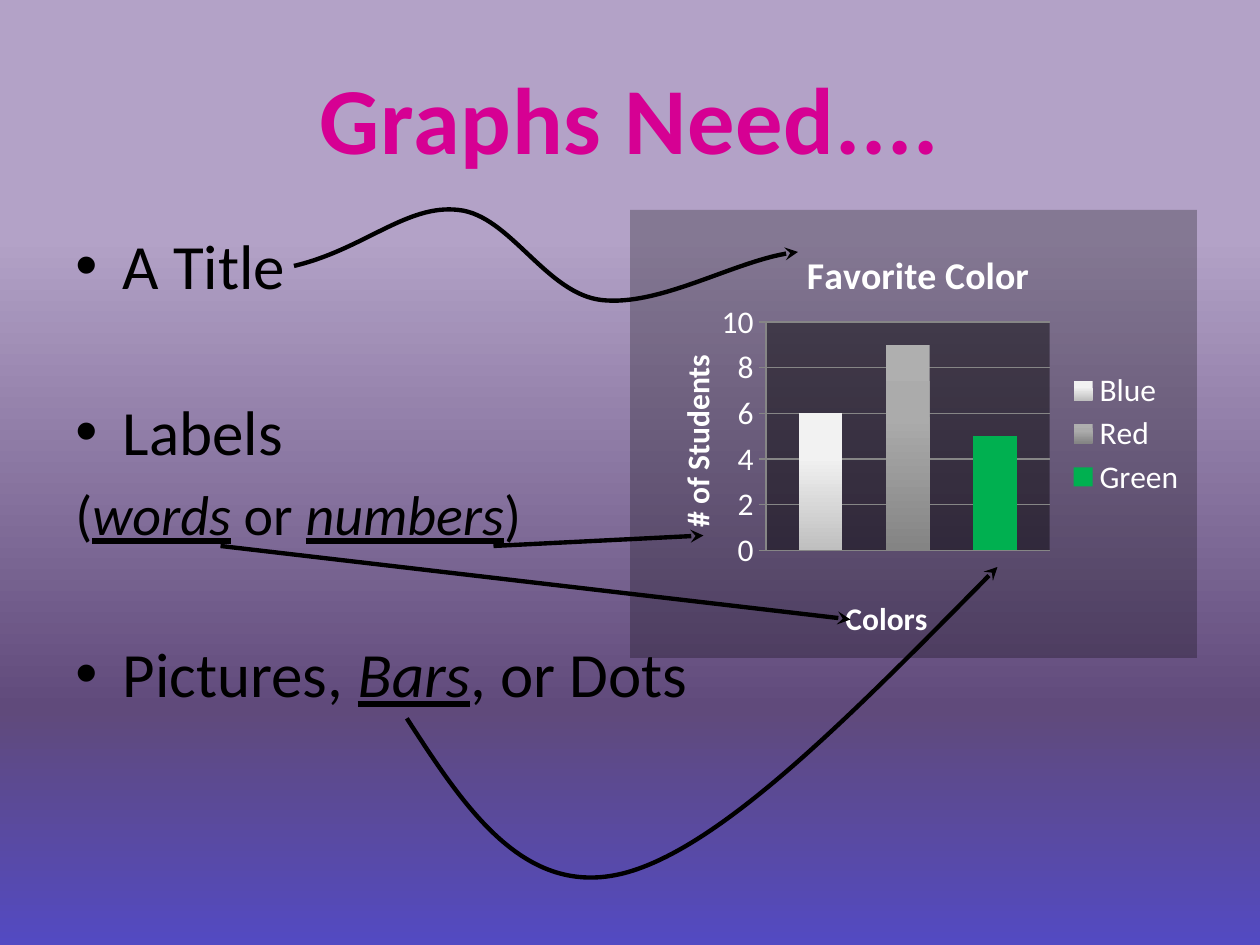
import pptx
import pptx.chart.data
import pptx.dml.color
import pptx.enum.chart
import pptx.enum.text
import pptx.oxml
import pptx.oxml.ns
import pptx.util

Pt = pptx.util.Pt
qn = pptx.oxml.ns.qn
ROLE = pptx.enum.chart


def paint(code):
    return pptx.dml.color.RGBColor.from_string(code)


def add(node, tag, **attrs):
    kid = pptx.oxml.parse_xml(f"<{tag} {pptx.oxml.ns.nsdecls(tag[0])}/>")
    for name, value in attrs.items():
        kid.set(name, str(value))
    node.append(kid)
    return kid


def shade(fill, root, stops):
    """Fill from top to bottom with (percent, colour) stops."""
    fill.gradient()
    fill.gradient_angle = 270
    group = next(root.iter(qn("a:gsLst")))
    for old in list(group):
        group.remove(old)
    for pos, code in stops:
        add(add(group, "a:gs", pos=pos * 1000), "a:srgbClr", val=code)


def veil(props, alpha):
    """Put a see-through black fill at the front of chart properties."""
    solid = add(props, "a:solidFill")
    add(add(solid, "a:srgbClr", val="000000"), "a:alpha", val=alpha * 1000)
    props.insert(0, solid)


def place(node, x, y, w=None, h=None, inner=False):
    """Set a manual layout in fractions of the chart."""
    for old in node.findall(qn("c:layout")):
        node.remove(old)
    layout = add(node, "c:layout")
    box = add(layout, "c:manualLayout")
    if inner:
        add(box, "c:layoutTarget", val="inner")
    add(box, "c:xMode", val="edge")
    add(box, "c:yMode", val="edge")
    for tag, value in zip("xywh", (x, y, w, h)):
        if value is not None:
            add(box, f"c:{tag}", val=value)
    lead = node.find(qn("c:tx"))
    if lead is None:
        lead = node.find(qn("c:legendPos"))
    node.insert(0 if lead is None else node.index(lead) + 1, layout)


class Deck:
    font = "Calibri"
    ink = "000000"
    pale = "FFFFFF"
    grey = "868686"

    def __init__(self, wide, high):
        self.show = pptx.Presentation()
        self.show.slide_width, self.show.slide_height = Pt(wide), Pt(high)
        self.slide = self.show.slides.add_slide(self.show.slide_layouts[6])

    def back(self, stops):
        shade(self.slide.background.fill, self.slide._element, stops)

    def text(self, x, y, w, h, middle=False):
        frame = self.slide.shapes.add_textbox(Pt(x), Pt(y), Pt(w), Pt(h)).text_frame
        frame.word_wrap = True
        if middle:
            frame.vertical_anchor = pptx.enum.text.MSO_ANCHOR.MIDDLE
        return frame

    def style(self, font, size, code, bold=False):
        font.name, font.size, font.bold = self.font, Pt(size), bold
        font.color.rgb = paint(code)

    def run(self, para, words, size, code=ink, bold=False, mark=False):
        run = para.add_run()
        run.text = words
        self.style(run.font, size, code, bold)
        if mark:
            run.font.italic = run.font.underline = True
        return run

    def item(self, para, parts, size, gap, dot):
        para.space_before = Pt(gap)
        props = para._p.get_or_add_pPr()
        props.set("marL", str(Pt(27)))
        props.set("indent", str(-Pt(27)))
        if dot:
            add(props, "a:buFont", typeface="Arial")
            add(props, "a:buChar", char="•")
        else:
            add(props, "a:buNone")
        for words, mark in parts:
            self.run(para, words, size, mark=mark)

    def arrow(self, shape):
        shape.line.color.rgb = paint(self.ink)
        shape.line.width = Pt(2.5)
        add(shape.line._get_or_add_ln(), "a:tailEnd", type="stealth")
        add(shape._element.spPr, "a:effectLst")

    def line(self, x1, y1, x2, y2):
        kind = pptx.enum.shapes.MSO_CONNECTOR.STRAIGHT
        self.arrow(self.slide.shapes.add_connector(kind, Pt(x1), Pt(y1), Pt(x2), Pt(y2)))

    def curve(self, start, *points):
        """Draw Bezier curves, three points to each."""
        build = self.slide.shapes.build_freeform(Pt(start[0]), Pt(start[1]))
        build.add_line_segments([(Pt(x), Pt(y)) for x, y in points], close=False)
        shape = build.convert_to_shape()
        shape.fill.background()
        track = next(shape._element.iter(qn("a:path")))
        legs = track.findall(qn("a:lnTo"))
        for i in range(0, len(legs), 3):
            bend = add(track, "a:cubicBezTo")
            for leg in legs[i:i + 3]:
                bend.append(leg[0])
                track.remove(leg)
        self.arrow(shape)

    def label(self, owner, words, size, x, y):
        para = owner.text_frame.paragraphs[0]
        self.run(para, words, size, self.pale, bold=True)
        place(owner._element, x, y)

    def chart(self, x, y, w, h, names, values, fills):
        data = pptx.chart.data.CategoryChartData()
        data.categories = ["1"]
        for name, value in zip(names, values):
            data.add_series(name, [value])
        kind = ROLE.XL_CHART_TYPE.COLUMN_CLUSTERED
        chart = self.slide.shapes.add_chart(kind, Pt(x), Pt(y), Pt(w), Pt(h), data).chart
        self.style(chart.font, 18, self.pale)

        # Panel and plot area
        space = chart._chartSpace
        props = add(space, "c:spPr")
        space.find(qn("c:chart")).addnext(props)
        veil(props, 26)
        area = next(space.iter(qn("c:plotArea")))
        veil(add(area, "c:spPr"), 46)
        place(area, 0.24, 0.25, 0.5, 0.51, inner=True)

        # Bars
        plot = chart.plots[0]
        plot.overlap, plot.gap_width, plot.vary_by_categories = -100, 150, False
        for bar, stops in zip(plot.series, fills):
            if isinstance(stops, str):
                bar.format.fill.solid()
                bar.format.fill.fore_color.rgb = paint(stops)
            else:
                shade(bar.format.fill, bar._element, stops)

        # Axes
        across, up = chart.category_axis, chart.value_axis
        across.tick_label_position = ROLE.XL_TICK_LABEL_POSITION.NONE
        across.major_tick_mark = ROLE.XL_TICK_MARK.NONE
        up.major_tick_mark = ROLE.XL_TICK_MARK.CROSS
        up.minimum_scale, up.maximum_scale, up.major_unit = 0, 10, 2
        for part in (across, up, up.major_gridlines):
            part.format.line.color.rgb = paint(self.grey)
            part.format.line.width = Pt(0.75)

        # Titles and legend
        chart.has_title = True
        self.label(chart.chart_title, "Favorite Color", 21.6, 0.3, 0.07)
        self.label(up.axis_title, "# of Students", 18, 0.07, 0.31)
        turn = up.axis_title.text_frame._txBody.bodyPr
        turn.set("rot", "-5400000")
        turn.set("vert", "horz")
        self.label(across.axis_title, "Colors", 18, 0.37, 0.85)
        chart.has_legend = True
        chart.legend.position = ROLE.XL_LEGEND_POSITION.RIGHT
        chart.legend.include_in_layout = False
        place(chart.legend._element, 0.77, 0.35, 0.21, 0.3)


def main():
    deck = Deck(720, 540)
    deck.back([(0, "B3A2C7"), (25, "B3A2C7"), (75, "604A7B"), (100, "534AC2")])

    # Title
    head = deck.text(36, 21.6, 648, 90, middle=True).paragraphs[0]
    head.alignment = pptx.enum.text.PP_ALIGN.CENTER
    run = deck.run(head, "Graphs Need....", 54, "D60093", bold=True)
    run._r.get_or_add_rPr().set("spc", "50")

    # List: parts, size, space before, bullet
    items = [
        ([("A Title", False)], 36, 2, True),
        ([("Labels", False)], 36, 51.5, True),
        ([("(", False), ("words", True), (" or ", False), ("numbers", True),
          (")", False)], 32, 6.4, False),
        ([("Pictures, ", False), ("Bars", True), (", or Dots", False)], 36, 50.5, True),
    ]
    body = deck.text(36, 126, 648, 356.4)
    for i, item in enumerate(items):
        deck.item(body.add_paragraph() if i else body.paragraphs[0], *item)

    # Chart
    deck.chart(360, 120, 324, 256, ["Blue", "Red", "Green"], [6, 9, 5],
               [[(0, "F2F2F2"), (35, "EFEFEF"), (100, "BFBFBF")],
                [(0, "AFAFAF"), (35, "ABABAB"), (100, "848484")], "00B050"])

    # Arrows from the words to the chart parts
    deck.curve((168, 152), (208, 142.5), (232.5, 116.5), (262, 120),
               (291.5, 123), (312, 168), (344, 171.5), (376.5, 175), (423.5, 147), (456, 144))
    deck.line(126, 312, 486, 354)
    deck.line(282, 312, 402, 306)
    deck.curve((232.5, 410.5), (265.5, 461.5), (299.5, 513.5), (356.5, 499),
               (412.5, 484.5), (491, 404), (570, 324))
    deck.show.save("out.pptx")


if __name__ == "__main__":
    main()
